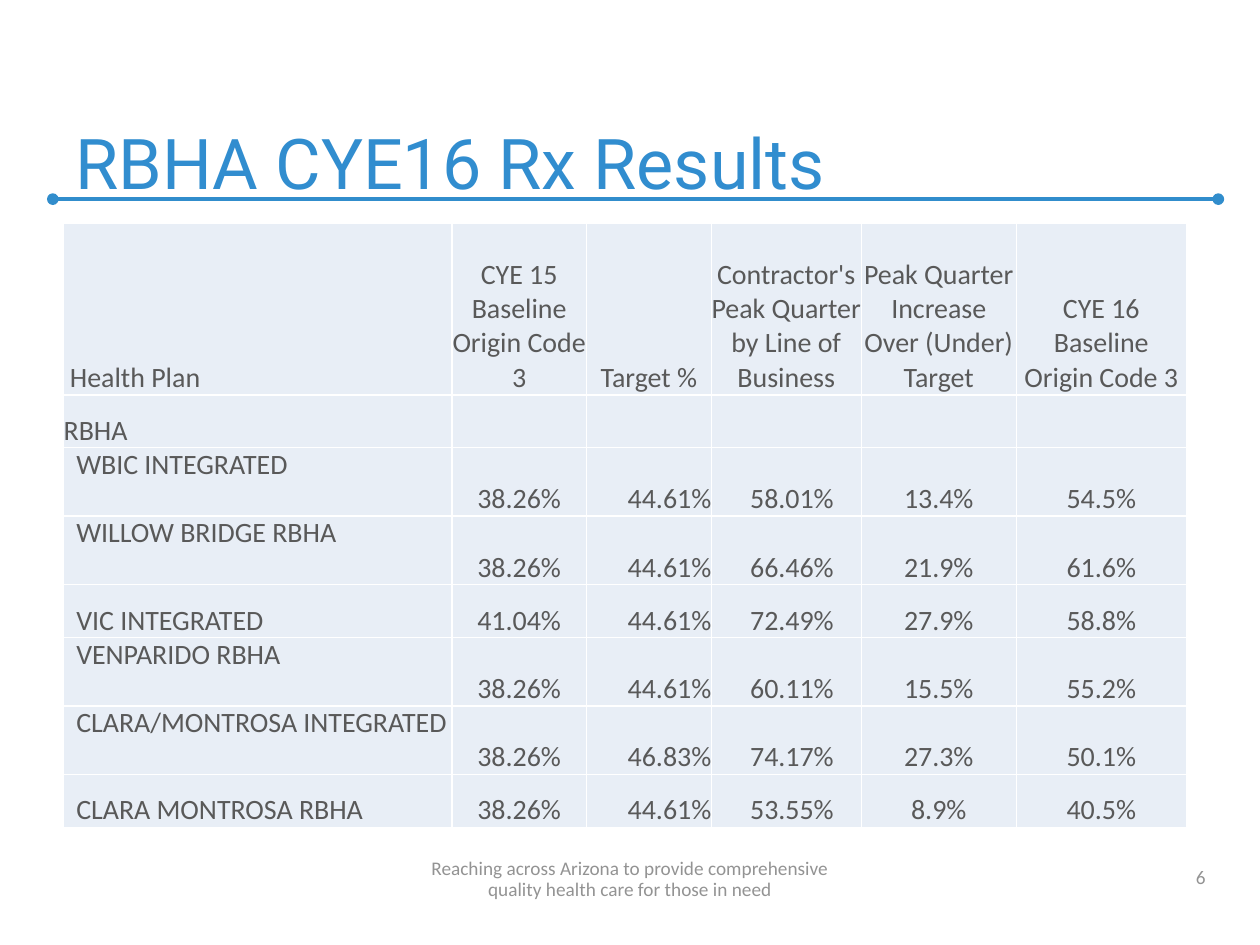
from lxml.etree import SubElement as Sub
from pptx import Presentation
from pptx.dml.color import RGBColor as RGB
from pptx.enum.shapes import MSO_CONNECTOR as Conn
from pptx.enum.text import MSO_ANCHOR as Anchor, MSO_AUTO_SIZE as Auto, PP_ALIGN as Align
from pptx.oxml.ns import qn
from pptx.util import Pt

BLUE, RULE, GREY, DARK = "318DCF", "318DCC", "939393", "595959"
PALE, WHITE = "E8EEF6", "FFFFFF"

WIDTHS = [221.8, 77, 71.3, 85.7, 88.6, 97.2]
HEAD_H, LOW_H, TALL_H = 97.9, 30.3, 39.1
HEADS = ["Health Plan", "CYE 15 Baseline\vOrigin Code 3", "Target %",
         "Contractor's Peak Quarter\vby Line of Business",
         "Peak Quarter Increase Over (Under) Target",
         "CYE 16 Baseline\vOrigin Code 3"]
# Plan, its figures, and whether its row is tall with the name on top
PLANS = [
    ("WBIC INTEGRATED", "38.26% 44.61% 58.01% 13.4% 54.5%", True),
    ("WILLOW BRIDGE RBHA", "38.26% 44.61% 66.46% 21.9% 61.6%", True),
    ("VIC INTEGRATED", "41.04% 44.61% 72.49% 27.9% 58.8%", False),
    ("VENPARIDO RBHA", "38.26% 44.61% 60.11% 15.5% 55.2%", True),
    ("CLARA/MONTROSA INTEGRATED", "38.26% 46.83% 74.17% 27.3% 50.1%", True),
    ("CLARA MONTROSA RBHA", "38.26% 44.61% 53.55% 8.9% 40.5%", False),
]


def color(code):
    return RGB.from_string(code)


def style(para, size, code, align, face="Calibri"):
    para.alignment = align
    font = para.font
    font.name, font.size = face, Pt(size)
    font.color.rgb = color(code)


def add_title(slide, text):
    title = slide.shapes.title
    title.left, title.top = Pt(36), Pt(24)
    title.width, title.height = Pt(654), Pt(96)
    frame = title.text_frame
    frame.text = text
    frame.auto_size = Auto.NONE
    frame.vertical_anchor = Anchor.BOTTOM
    style(frame.paragraphs[0], 40, BLUE, Align.LEFT, "Roboto")


def add_rule(slide):
    rule = slide.shapes.add_connector(Conn.STRAIGHT, Pt(30.2), Pt(113.8), Pt(696.2), Pt(113.8))
    rule.line.width = Pt(2.25)
    rule.line.color.rgb = color(RULE)
    line = rule.line._get_or_add_ln()
    for end in ("a:headEnd", "a:tailEnd"):
        Sub(line, qn(end), type="oval")
    Sub(rule._element.spPr, qn("a:effectLst"))


def add_note(slide, text, box, align, pitch=None):
    frame = slide.shapes.add_textbox(*map(Pt, box)).text_frame
    frame.word_wrap = True
    frame.vertical_anchor = Anchor.BOTTOM
    para = frame.paragraphs[0]
    para.text = text
    style(para, 11, GREY, align)
    if pitch:
        para.line_spacing = Pt(pitch)


def add_edges(cell):
    props = cell._tc.get_or_add_tcPr()
    for side in "LRTB":
        edge = Sub(props, qn("a:ln" + side), w=str(Pt(1)))
        Sub(Sub(edge, qn("a:solidFill")), qn("a:srgbClr"), val=WHITE)


def fill_cell(cell, text, align, left, anchor):
    add_edges(cell)
    cell.fill.solid()
    cell.fill.fore_color.rgb = color(PALE)
    cell.margin_left = Pt(left)
    cell.margin_right = cell.margin_top = cell.margin_bottom = 0
    cell.vertical_anchor = anchor
    para = cell.text_frame.paragraphs[0]
    para.text = text
    style(para, 16, DARK, align)


def add_grid(slide):
    # Each row: texts, height, indent of the name, tall or not
    rows = [(HEADS, HEAD_H, 3.6, False), (["RBHA"] + [""] * 5, LOW_H, 0, False)]
    for name, vals, tall in PLANS:
        rows.append(([name] + vals.split(), TALL_H if tall else LOW_H, 7.2, tall))
    high = sum(row[1] for row in rows)
    grid = slide.shapes.add_table(len(rows), len(WIDTHS), Pt(36.4), Pt(127.7),
                                  Pt(sum(WIDTHS)), Pt(high)).table
    grid.first_row = grid.horz_banding = False
    for col, width in zip(grid.columns, WIDTHS):
        col.width = Pt(width)
    for r, (texts, height, indent, tall) in enumerate(rows):
        grid.rows[r].height = Pt(height)
        for c, text in enumerate(texts):
            align, left, anchor = Align.CENTER, 0, Anchor.BOTTOM
            if c == 0:
                align, left = Align.LEFT, indent
                anchor = Anchor.TOP if tall else Anchor.BOTTOM
            elif r > 1 and c == 2:
                align = Align.RIGHT
            elif r > 1 and c == 3:
                left = 6.5
            fill_cell(grid.cell(r, c), text, align, left, anchor)


def main():
    deck = Presentation()
    deck.slide_width, deck.slide_height = Pt(720), Pt(540)
    slide = deck.slides.add_slide(deck.slide_layouts[5])
    add_rule(slide)
    add_title(slide, "RBHA CYE16 Rx Results")
    # Page number and footer
    add_note(slide, "6", (528, 488, 168, 23), Align.RIGHT)
    add_note(slide, "Reaching across Arizona to provide comprehensive\v"
             "quality health care for those in need",
             (0, 488, 720, 30), Align.CENTER, 12)
    add_grid(slide)
    deck.save("out.pptx")


if __name__ == "__main__":
    main()
